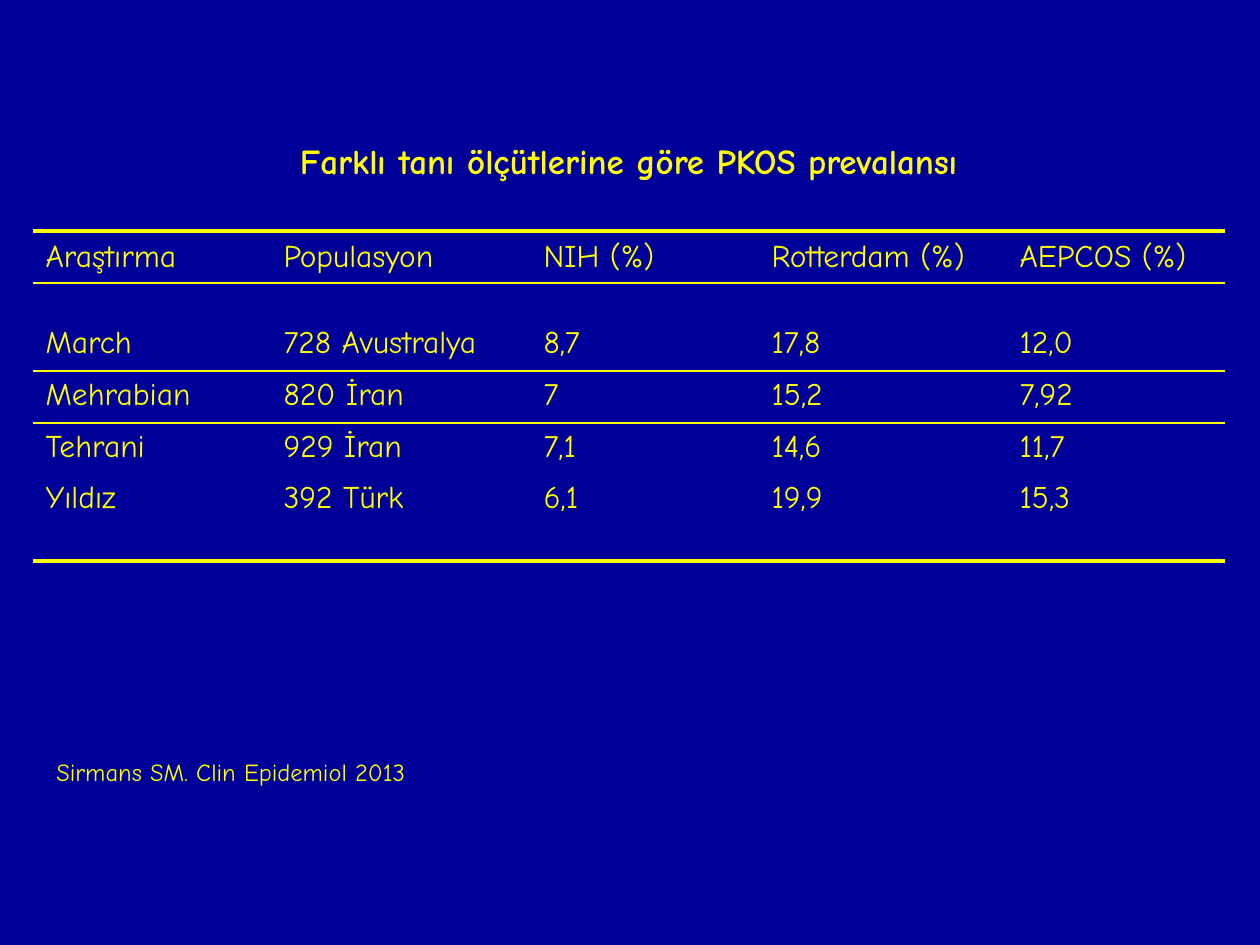
from lxml import etree
from pptx import Presentation
from pptx.dml.color import RGBColor
from pptx.enum.text import MSO_ANCHOR, PP_ALIGN
from pptx.oxml.ns import qn
from pptx.util import Pt

NAVY = RGBColor(0x00, 0x00, 0x99)
YELLOW = RGBColor(0xFF, 0xFF, 0x00)
FONT = "Comic Neue"
MIDDLE, TOP = MSO_ANCHOR.MIDDLE, MSO_ANCHOR.TOP
CENTER, LEFT = PP_ALIGN.CENTER, PP_ALIGN.LEFT
PLAIN_TABLE_STYLE = "{2D5ABB26-0587-4C30-8999-92F81FD0307C}"

# Content
HEADING = "Farklı tanı ölçütlerine göre PKOS prevalansı"
STUDIES = [
    ("Araştırma", "Populasyon", "NIH (%)", "Rotterdam (%)", "AEPCOS (%)"),
    ("March", "728 Avustralya", "8,7", "17,8", "12,0"),
    ("Mehrabian", "820 İran", "7", "15,2", "7,92"),
    ("Tehrani", "929 İran", "7,1", "14,6", "11,7"),
    ("Yıldız", "392 Türk", "6,1", "19,9", "15,3"),
]
CITATION = "Sirmans SM. Clin Epidemiol 2013"

# Layout in px
COLUMN_WIDTHS = [238, 260, 228, 248, 218]
ROW_HEIGHTS = [96, 52, 88, 52, 51, 87]
TABLE_LEFT, TABLE_TOP = 33, 135
TOP_MARGINS = {0: 8, 2: 42}  # row: space above its text
RULES_BELOW = {0: 3, 1: 1.5, 2: 1.5, 5: 3}  # row: line width in points


def px(n):
    return n * 914400 // 126


def write(frame, text, size, bold=False, align=LEFT):
    frame.text = text
    paragraph = frame.paragraphs[0]
    paragraph.alignment = align
    font = paragraph.font
    font.name, font.size, font.bold = FONT, Pt(size), bold
    font.color.rgb = YELLOW


def add_rule(cell, side, width):
    line = etree.SubElement(cell._tc.get_or_add_tcPr(), qn(f"a:{side}"), w=str(Pt(width)))
    fill = etree.SubElement(line, qn("a:solidFill"))
    etree.SubElement(fill, qn("a:srgbClr"), val=str(YELLOW))


prs = Presentation()
prs.slide_width, prs.slide_height = px(1260), px(945)
slide = prs.slides.add_slide(prs.slide_layouts[6])
slide.background.fill.solid()
slide.background.fill.fore_color.rgb = NAVY

# Prevalence table
table_frame = slide.shapes.add_table(
    len(ROW_HEIGHTS), len(COLUMN_WIDTHS), px(TABLE_LEFT), px(TABLE_TOP),
    px(sum(COLUMN_WIDTHS)), px(sum(ROW_HEIGHTS)))
table = table_frame.table
table.first_row = table.horz_banding = False
next(table_frame.element.iter(qn("a:tableStyleId"))).text = PLAIN_TABLE_STYLE
for column, width in zip(table.columns, COLUMN_WIDTHS):
    column.width = px(width)
for row, height in zip(table.rows, ROW_HEIGHTS):
    row.height = px(height)

# Heading row, then one row per study
table.cell(0, 0).merge(table.cell(0, len(COLUMN_WIDTHS) - 1))
write(table.cell(0, 0).text_frame, HEADING, 20, bold=True, align=CENTER)
for r, study in enumerate(STUDIES, start=1):
    for c, value in enumerate(study):
        write(table.cell(r, c).text_frame, value, 18)

# Rules, fills and anchoring
for r, row in enumerate(table.rows):
    for cell in row.cells:
        if r - 1 in RULES_BELOW:
            add_rule(cell, "lnT", RULES_BELOW[r - 1])
        if r in RULES_BELOW:
            add_rule(cell, "lnB", RULES_BELOW[r])
        cell.fill.background()
        cell.vertical_anchor = MIDDLE if r == 1 else TOP
        if r in TOP_MARGINS:
            cell.margin_top = px(TOP_MARGINS[r])

# Citation
citation = slide.shapes.add_textbox(px(44), px(750), px(1181), px(43)).text_frame
citation.word_wrap = True
citation.vertical_anchor = MIDDLE
write(citation, CITATION, 14)

prs.save("out.pptx")
